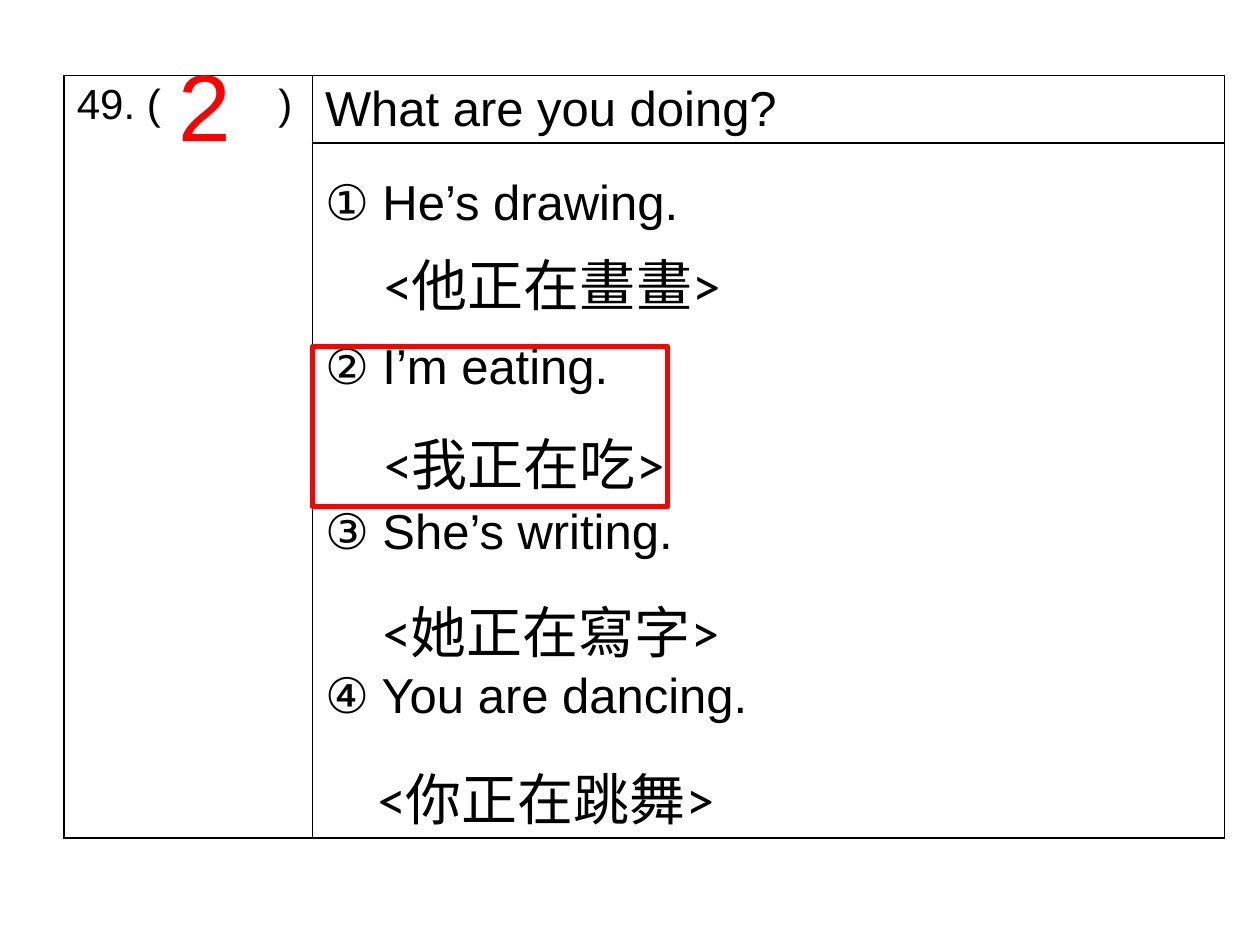
from lxml import etree
from pptx import Presentation
from pptx.dml.color import RGBColor
from pptx.enum.shapes import MSO_SHAPE
from pptx.enum.text import MSO_AUTO_SIZE, PP_ALIGN
from pptx.oxml.ns import qn
from pptx.util import Inches, Pt

RECT = MSO_SHAPE.RECTANGLE
GROW = MSO_AUTO_SIZE.SHAPE_TO_FIT_TEXT
LEFT = PP_ALIGN.LEFT
COLORS = {"ink": "000000", "answer": "FF0000"}
COLS, ROWS = 100, 75
CELL = Inches(0.1)
QUESTION_BOX = (5.1, 6, 92.1, 60.5)
NUMBER_COLS = 19.7
PROMPT_ROWS = 5.35
OPTIONS = ["① He’s drawing.", "② I’m eating.", "③ She’s writing.", "④ You are dancing."]
TRANSLATIONS = [
    (24.4, 13.4, [("<他正在畫畫>", "Calibri")]),
    (24.4, 27.6, [("<我正在吃>", "Calibri")]),
    (24.3, 40.9, [("<", "Calibri"), ("她正在寫字", "Arial"), (">", "Calibri")]),
    (23.9, 54.2, [("<你正在跳舞>", "Calibri")]),
]


def grid(*units):
    return [round(u * CELL) for u in units]


def within(box, x, y, w, h):
    return grid(box[0] + x, box[1] + y, w, h)


def add_run(p, text, size, font="Arial", color="ink"):
    r = p.add_run()
    r.text = text
    r.font.size = Pt(size)
    r.font.name = font
    r.font.color.rgb = RGBColor.from_string(COLORS[color])


def add_text(s, area, runs, size, color="ink"):
    tf = s.shapes.add_textbox(*area).text_frame
    tf.word_wrap = True
    tf.auto_size = GROW
    for text, font in runs:
        add_run(tf.paragraphs[0], text, size, font, color)


def style_cell(cell):
    cell.fill.background()
    tcPr = cell._tc.get_or_add_tcPr()
    for i, side in enumerate(("lnL", "lnR", "lnT", "lnB")):
        ln = etree.Element(qn(f"a:{side}"), w=str(Pt(1)))
        fill = etree.SubElement(ln, qn("a:solidFill"))
        etree.SubElement(fill, qn("a:srgbClr"), val=COLORS["ink"])
        tcPr.insert(i, ln)


def add_tab_stop(p, position):
    tabs = etree.SubElement(p._p.get_or_add_pPr(), qn("a:tabLst"))
    etree.SubElement(tabs, qn("a:tab"), pos=str(position), algn="l")


def add_question_table(s, box):
    table = s.shapes.add_table(2, 2, *grid(*box)).table
    table.first_row = table.horz_banding = False
    for col, width in zip(table.columns, grid(NUMBER_COLS, box[2] - NUMBER_COLS)):
        col.width = width
    for row, height in zip(table.rows, grid(PROMPT_ROWS, box[3] - PROMPT_ROWS)):
        row.height = height
    for cell in table.iter_cells():
        style_cell(cell)
    table.cell(0, 0).merge(table.cell(1, 0))

    p = table.cell(0, 0).text_frame.paragraphs[0]
    add_tab_stop(p, grid(16)[0])
    add_run(p, "49. (\t)", 24)
    add_run(table.cell(0, 1).text_frame.paragraphs[0], "What are you doing?", 28)

    tf = table.cell(1, 1).text_frame
    for i, option in enumerate(OPTIONS):
        p = tf.add_paragraph() if i else tf.paragraphs[0]
        p.alignment = LEFT
        p.line_spacing = 1.5
        if i < len(OPTIONS) - 1:
            p.space_after = Pt(47)
        add_run(p, option, 28)


def add_translations(s, box):
    for x, y, runs in TRANSLATIONS:
        add_text(s, within(box, x, y, 38.6, 6.4), runs, 32)


def add_answer(s, box):
    add_text(s, within(box, 8.1, -2.8, 7.6, 10.1), [("2", "Arial")], 54, "answer")
    sp = s.shapes.add_shape(RECT, *within(box, NUMBER_COLS, 21.5, 28.2, 12.7))
    sp.shadow.inherit = False
    sp.fill.background()
    sp.line.color.rgb = RGBColor.from_string(COLORS["answer"])
    sp.line.width = Pt(3)


def main():
    prs = Presentation()
    prs.slide_width, prs.slide_height = grid(COLS, ROWS)
    s = prs.slides.add_slide(prs.slide_layouts[6])
    for add_part in (add_question_table, add_translations, add_answer):
        add_part(s, QUESTION_BOX)
    prs.save("out.pptx")


if __name__ == "__main__":
    main()
